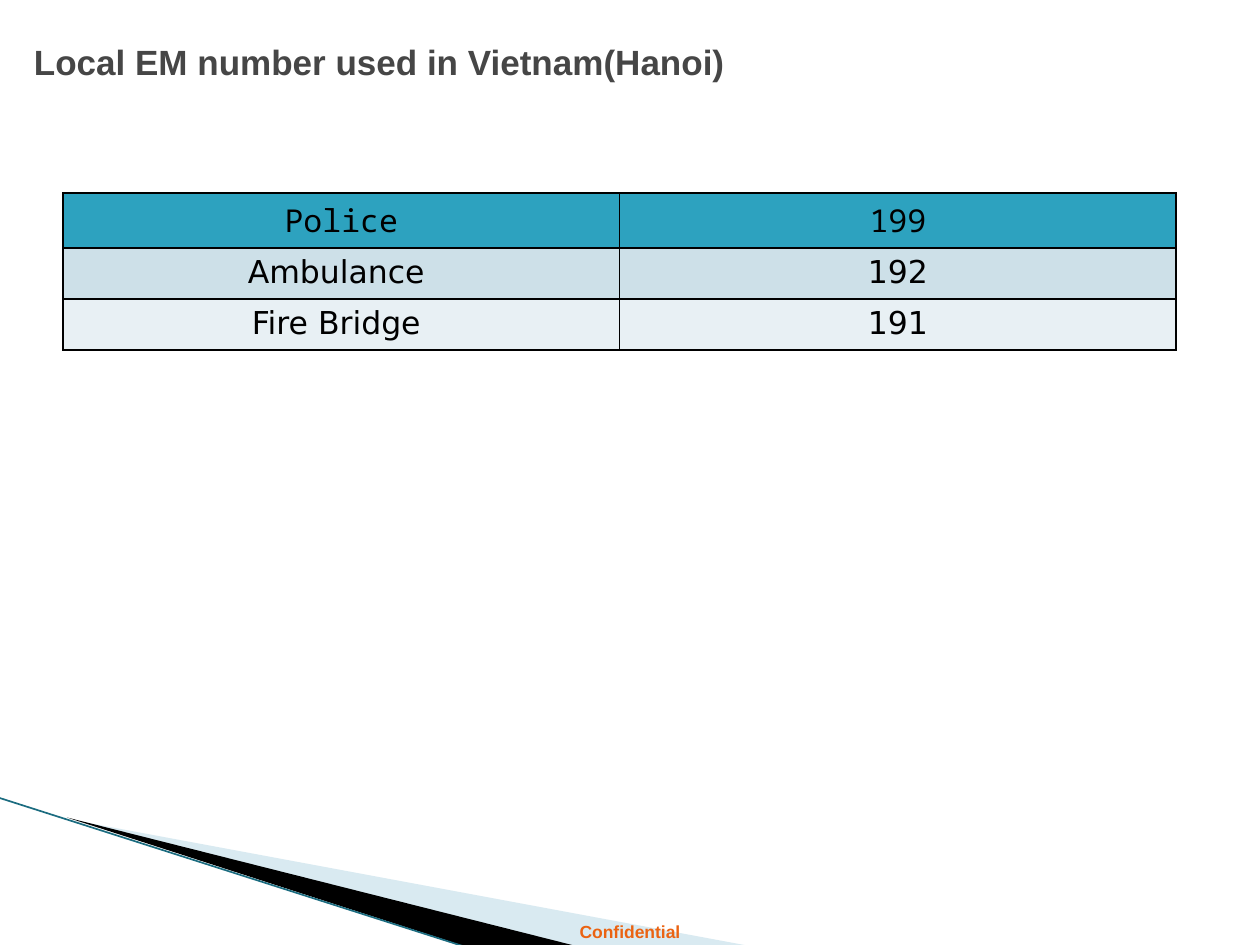
from dataclasses import dataclass

from lxml.etree import SubElement
from pptx import Presentation
from pptx.dml.color import RGBColor
from pptx.enum.shapes import MSO_CONNECTOR as Connector
from pptx.enum.text import MSO_ANCHOR as Anchor, PP_ALIGN as Align
from pptx.oxml.ns import qn
from pptx.util import Cm, Pt


@dataclass
class Wedge:
    points: list[tuple[float, float]]
    color: str
    opacity: int = 100


@dataclass
class NumberRow:
    service: str
    number: str
    fill: str
    font: str
    height: float


WEDGES = [
    Wedge([(1.4, 16.52), (15.11, 19.07), (11.58, 19.07)], "A0CBDC", 40),
    Wedge([(1.35, 16.48), (11.61, 19.07), (9.45, 19.1)], "000000"),
]
ROWS = [
    NumberRow("Police", "199", "2DA2BF", "Noto Sans Mono", 1.11),
    NumberRow("Ambulance ", "192", "CDE0E8", "DejaVu Sans", 1.03),
    NumberRow("Fire Bridge ", "191", "E8F0F4", "DejaVu Sans", 1.03),
]


def rgb(color: str) -> RGBColor:
    return RGBColor.from_string(color)


def format_text(paragraph, font: str, size: float, color: str,
                bold: bool = False, align=Align.CENTER) -> None:
    paragraph.alignment = align
    for run in paragraph.runs:
        run.font.name = font
        run.font.size = Pt(size)
        run.font.bold = bold
        run.font.color.rgb = rgb(color)


def draw_wedge(slide, wedge: Wedge) -> None:
    start, *rest = [(Cm(x), Cm(y)) for x, y in wedge.points]
    builder = slide.shapes.build_freeform(*start)
    builder.add_line_segments(rest, close=True)
    shape = builder.convert_to_shape()
    shape.shadow.inherit = False
    shape.line.fill.background()
    shape.fill.solid()
    shape.fill.fore_color.rgb = rgb(wedge.color)
    if wedge.opacity < 100:
        color = shape.fill._xPr.find(f".//{qn('a:srgbClr')}")
        SubElement(color, qn("a:alpha"), val=str(wedge.opacity * 1000))


def draw_edge(slide) -> None:
    edge = slide.shapes.add_connector(
        Connector.STRAIGHT, Cm(-0.03), Cm(16.08), Cm(9.42), Cm(19.1))
    edge.line.color.rgb = rgb("1B6C80")
    edge.line.width = Pt(0.95)
    SubElement(edge._element.spPr, qn("a:effectLst"))


def set_borders(cell, color: str, width: float) -> None:
    properties = cell._tc.get_or_add_tcPr()
    for index, side in enumerate(("lnL", "lnR", "lnT", "lnB")):
        line = SubElement(properties, qn(f"a:{side}"), w=str(Pt(width)))
        fill = SubElement(line, qn("a:solidFill"))
        SubElement(fill, qn("a:srgbClr"), val=color)
        properties.remove(line)
        properties.insert(index, line)  # borders come before the fill


def draw_table(slide, rows: list[NumberRow]) -> None:
    height = sum(row.height for row in rows)
    table = slide.shapes.add_table(
        len(rows), 2, Cm(1.27), Cm(3.89), Cm(22.44), Cm(height)).table
    for index, row in enumerate(rows):
        table.rows[index].height = Cm(row.height)
        for column, text in enumerate((row.service, row.number)):
            cell = table.cell(index, column)
            cell.fill.solid()
            cell.fill.fore_color.rgb = rgb(row.fill)
            set_borders(cell, "000000", 1)
            cell.text_frame.text = text
            format_text(cell.text_frame.paragraphs[0], row.font, 18, "000000")


def draw_title(slide, text: str) -> None:
    title = slide.shapes.title
    title.left, title.top, title.width, title.height = (
        Cm(0.43), Cm(0.43), Cm(22.86), Cm(5.08))
    frame = title.text_frame
    frame.text = text
    frame.vertical_anchor = Anchor.TOP
    frame.margin_top = Cm(0.38)
    format_text(frame.paragraphs[0], "Arial", 20, "464646", True, Align.LEFT)


def draw_footer(slide, text: str) -> None:
    box = slide.shapes.add_textbox(Cm(0), Cm(18.44), Cm(25.4), Cm(0.68))
    box.text_frame.word_wrap = True
    box.text_frame.text = text
    format_text(box.text_frame.paragraphs[0], "Arial", 10, "EB6312", True)


def main() -> None:
    presentation = Presentation()
    presentation.slide_width, presentation.slide_height = Cm(25.4), Cm(19.05)
    slide = presentation.slides.add_slide(presentation.slide_layouts[5])

    # Corner decoration and footer
    for wedge in WEDGES:
        draw_wedge(slide, wedge)
    draw_edge(slide)
    draw_footer(slide, "Confidential")

    # Title and emergency numbers
    draw_title(slide, "Local EM number used in Vietnam(Hanoi)")
    draw_table(slide, ROWS)

    presentation.save("out.pptx")


if __name__ == "__main__":
    main()
